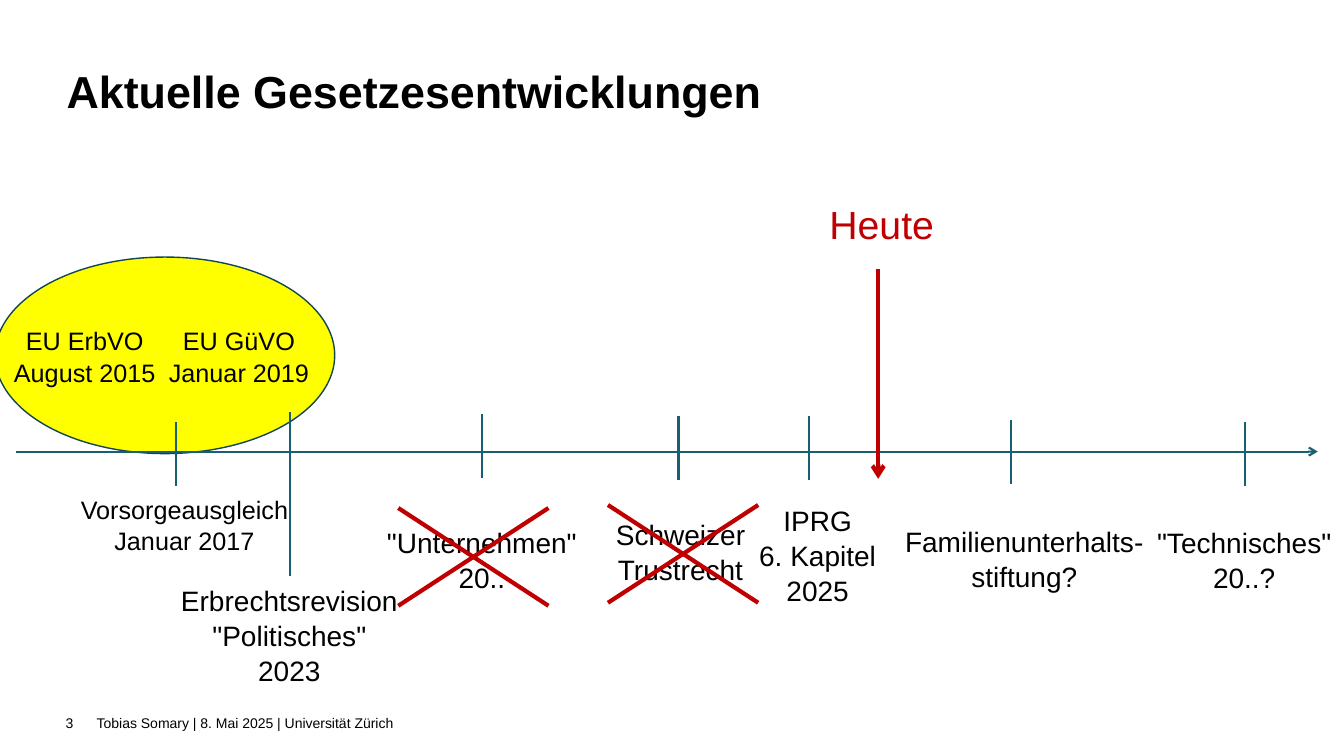
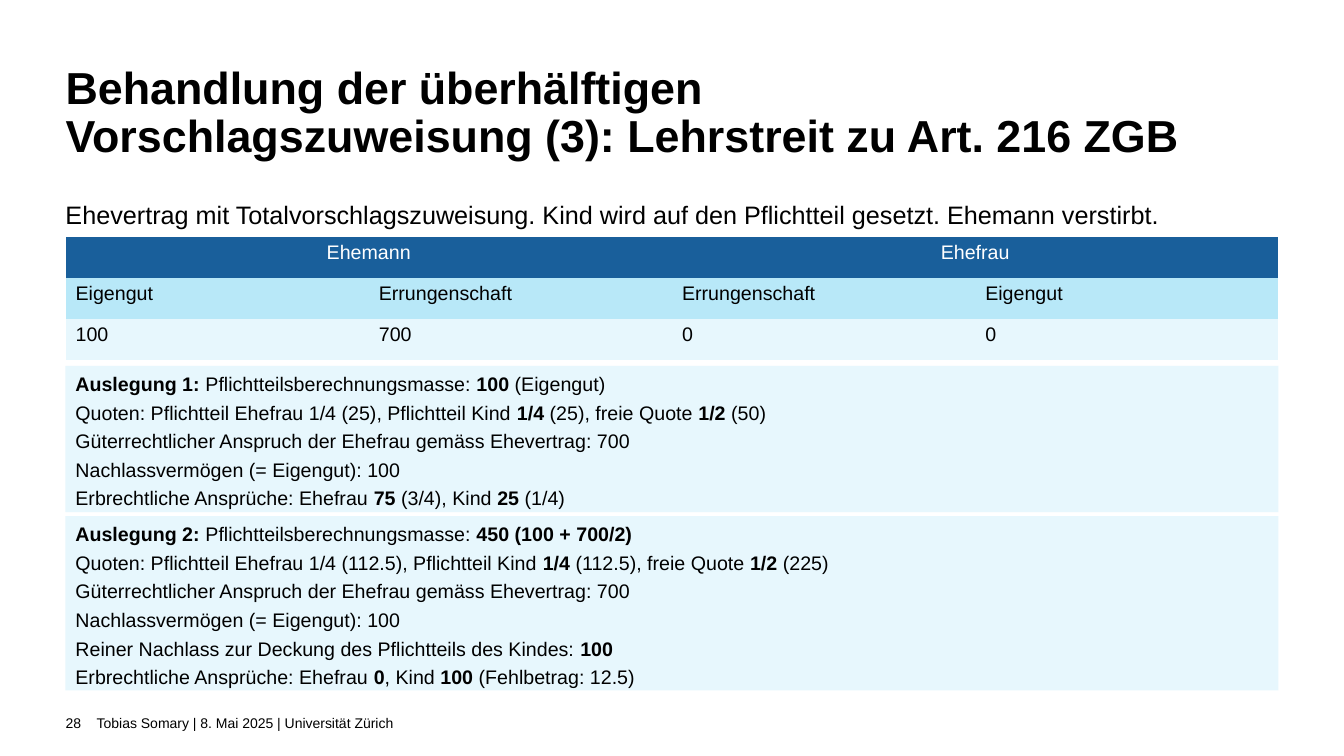
import dataclasses

import pptx
import pptx.dml.color
import pptx.enum.shapes
import pptx.enum.text
import pptx.oxml.ns
import pptx.oxml.xmlchemy
import pptx.util

PX = 9144
SLIDE_SIZE = (1333, 750)
FOOTER = "Tobias Somary | 8. Mai 2025 | Universität Zürich"
PLAIN_TABLE = "{2D5ABB26-0587-4C30-8999-92F81FD0307C}"
LEFT = pptx.enum.text.PP_ALIGN.LEFT
CENTER = pptx.enum.text.PP_ALIGN.CENTER
TOP = pptx.enum.text.MSO_ANCHOR.TOP
MIDDLE = pptx.enum.text.MSO_ANCHOR.MIDDLE


@dataclasses.dataclass(frozen=True)
class Theme:
    """Colours, font, type sizes and spacing shared by the slides."""
    font: str = "Arial"
    ink: str = "000000"
    white: str = "FFFFFF"
    accent: str = "C00000"
    axis: str = "195F73"
    outline: str = "124655"
    highlight: str = "FFFF00"
    header: str = "195F9B"
    subheader: str = "B8E8F8"
    pale: str = "E7F7FD"
    title: int = 32
    today: int = 28
    event: int = 20
    lead: int = 18
    body: int = 14
    footer: int = 10
    leading: float = 1.04
    title_leading: float = 0.9


THEME = Theme()


@dataclasses.dataclass(frozen=True)
class Box:
    """A rectangle in px."""
    left: int
    top: int
    width: int
    height: int

    def inner(self, left, top, width, height):
        """Return a box placed relative to this one."""
        return Box(self.left + left, self.top + top, width, height)

    def emu(self):
        """Return left, top, width and height in EMU."""
        return [px * PX for px in (self.left, self.top, self.width, self.height)]


def rgb(code):
    """Turn a hex code into a colour."""
    return pptx.dml.color.RGBColor.from_string(code)


def write(frame, paragraphs, size, color=THEME.ink, align=LEFT, anchor=TOP,
          inset=(0, 0), leading=THEME.leading, before=0, bold=False):
    """Fill a text frame; ** toggles bold and a newline breaks the line."""
    frame.word_wrap = True
    frame.auto_size = pptx.enum.text.MSO_AUTO_SIZE.NONE
    frame.vertical_anchor = anchor
    frame.margin_left = frame.margin_right = inset[0] * PX
    frame.margin_top = frame.margin_bottom = inset[1] * PX
    for index, content in enumerate(paragraphs):
        paragraph = frame.add_paragraph() if index else frame.paragraphs[0]
        paragraph.alignment = align
        paragraph.line_spacing = leading
        paragraph.space_before = pptx.util.Pt(before if index else 0)
        for part, piece in enumerate(content.split("**")):
            for row, words in enumerate(piece.split("\n")):
                if row:
                    paragraph.add_line_break()
                if words:
                    run = paragraph.add_run()
                    run.text = words
                    run.font.name = THEME.font
                    run.font.size = pptx.util.Pt(size)
                    run.font.bold = bold or part % 2 == 1
                    run.font.color.rgb = rgb(color)


def add_text(slide, box, text, size, **style):
    """Add a one-paragraph text box."""
    write(slide.shapes.add_textbox(*box.emu()).text_frame, [text], size, **style)


def add_filled(slide, box, kind, fill, outline=None):
    """Add a flat preset shape without shadow."""
    shape = slide.shapes.add_shape(kind, *box.emu())
    shape.shadow.inherit = False
    shape.fill.solid()
    shape.fill.fore_color.rgb = rgb(fill)
    if outline:
        shape.line.color.rgb = rgb(outline)
        shape.line.width = pptx.util.Pt(1)
    else:
        shape.line.fill.background()
    return shape


def add_line(slide, box, start, end, color, weight, arrow=False):
    """Draw a straight line between two points of the box."""
    points = [px * PX for x, y in (start, end) for px in (box.left + x, box.top + y)]
    line = slide.shapes.add_connector(
        pptx.enum.shapes.MSO_CONNECTOR.STRAIGHT, *points)
    line.line.color.rgb = rgb(color)
    line.line.width = pptx.util.Pt(weight)
    if arrow:
        tail = pptx.oxml.xmlchemy.OxmlElement("a:tailEnd")
        tail.set("type", "arrow")
        line.line._get_or_add_ln().append(tail)
    line._element.spPr.append(pptx.oxml.xmlchemy.OxmlElement("a:effectLst"))


def add_page(deck, title, title_box, number):
    """Add a slide with its title, page number and footer."""
    slide = deck.slides.add_slide(deck.slide_layouts[5])
    heading = slide.shapes.title
    heading.left, heading.top, heading.width, heading.height = title_box.emu()
    write(heading.text_frame, [title], THEME.title, bold=True,
          leading=THEME.title_leading)
    band = Box(65, 685, 501, 65)
    for left, width, text in ((0, 31, number), (31, 470, FOOTER)):
        add_text(slide, band.inner(left, 0, width, 65), text, THEME.footer,
                 anchor=MIDDLE, leading=1.0)
    return slide


def add_cross(slide, box):
    """Strike out a box with two diagonals."""
    for start, end in ((0, box.height), (box.height, 0)):
        add_line(slide, box, (0, start), (box.width, end), THEME.accent, 3)


def add_eu_rules(slide, box):
    """Draw the ellipse of EU regulations with its two labels."""
    add_filled(slide, box, pptx.enum.shapes.MSO_SHAPE.OVAL,
               THEME.highlight, THEME.outline)
    for left, text in ((13, "EU ErbVO\nAugust 2015"), (166, "EU GüVO\nJanuar 2019")):
        add_text(slide, box.inner(left, 67, 152, 60), text, THEME.lead, align=CENTER)


def add_timeline(slide, box):
    """Draw the axis with its events, the marker for today and the crosses."""
    axis = 258
    add_eu_rules(slide, box.inner(-5, 65, 337, 195))
    add_line(slide, box, (16, axis), (1307, axis), THEME.axis, 1.5, arrow=True)
    events = (
        (175, 229, 63, 183, 299, THEME.lead, "Vorsorgeausgleich\nJanuar 2017"),
        (288, 219, 162, 287, 388, THEME.event,
         "Erbrechtsrevision\n\"Politisches\"\n2023"),
        (478, 221, 63, 478, 330, THEME.event, "\"Unternehmen\"\n20.."),
        (673, 223, 63, 675, 322, THEME.event, "Schweizer\nTrustrecht"),
        (802, 223, 63, 811, 308, THEME.event, "IPRG\n6. Kapitel\n2025"),
        (1003, 227, 63, 1016, 329, THEME.event, "Familienunterhalts-\nstiftung?"),
        (1235, 229, 63, 1234, 330, THEME.event, "\"Technisches\"\n20..?"),
    )
    for tick, top, length, center, label_top, size, text in events:
        add_line(slide, box, (tick, top), (tick, top + length), THEME.axis, 1.5)
        half = min(125, box.width - center)
        label = box.inner(center - half, label_top, 2 * half, 100)
        add_text(slide, label, text, size, align=CENTER)
    add_text(slide, box.inner(806, 7, 137, 47), "Heute", THEME.today,
             color=THEME.accent, align=CENTER)
    add_line(slide, box, (871, 77), (871, 285), THEME.accent, 3, arrow=True)
    for left, top in ((395, 314), (603, 311)):
        add_cross(slide, box.inner(left, top, 149, 97))


def add_estate_table(slide, box):
    """Add the table of the spouses' property."""
    rows = (
        (THEME.header, THEME.white, CENTER, ("Ehemann", "", "Ehefrau", "")),
        (THEME.subheader, THEME.ink, LEFT,
         ("Eigengut", "Errungenschaft", "Errungenschaft", "Eigengut")),
        (THEME.pale, THEME.ink, LEFT, ("100", "700", "0", "0")),
    )
    table = slide.shapes.add_table(len(rows), 4, *box.emu()).table
    style = table._tbl.tblPr.find(pptx.oxml.ns.qn("a:tableStyleId"))
    style.text = PLAIN_TABLE
    for left in (0, 2):
        table.cell(0, left).merge(table.cell(0, left + 1))
    for row, (fill, color, align, texts) in enumerate(rows):
        for column, text in enumerate(texts):
            cell = table.cell(row, column)
            cell.fill.solid()
            cell.fill.fore_color.rgb = rgb(fill)
            if text:
                write_cell(cell, text, color, align)


def write_cell(cell, text, color, align):
    """Write one table cell."""
    paragraph = cell.text_frame.paragraphs[0]
    paragraph.alignment = align
    run = paragraph.add_run()
    run.text = text
    run.font.name = THEME.font
    run.font.size = pptx.util.Pt(THEME.body)
    run.font.bold = False
    run.font.color.rgb = rgb(color)


def add_reading(slide, box, lines):
    """Add a pale panel with one reading of the law."""
    panel = add_filled(slide, box, pptx.enum.shapes.MSO_SHAPE.RECTANGLE, THEME.pale)
    write(panel.text_frame, lines, THEME.body, inset=(10, 5), before=3)


def add_dispute(slide, box):
    """Place the case, the table and both readings below each other."""
    add_text(slide, box.inner(0, 0, box.width, 34),
             "Ehevertrag mit Totalvorschlagszuweisung. Kind wird auf den "
             "Pflichtteil gesetzt. Ehemann verstirbt.",
             THEME.lead, leading=pptx.util.Pt(24))
    add_estate_table(slide, box.inner(0, 41, box.width, 122))
    shared = ["Güterrechtlicher Anspruch der Ehefrau gemäss Ehevertrag: 700",
              "Nachlassvermögen (= Eigengut): 100"]
    add_reading(slide, box.inner(0, 169, box.width, 145), [
        "**Auslegung 1: **Pflichtteilsberechnungsmasse: **100 **(Eigengut)",
        "Quoten: Pflichtteil Ehefrau 1/4 (25), Pflichtteil Kind **1/4** (25), "
        "freie Quote **1/2 **(50)",
        *shared,
        "Erbrechtliche Ansprüche: Ehefrau **75** (3/4), Kind **25 **(1/4)"])
    add_reading(slide, box.inner(0, 318, box.width, 173), [
        "**Auslegung 2: **Pflichtteilsberechnungsmasse: **450 (100 + 700/2)**",
        "Quoten: Pflichtteil Ehefrau 1/4 (112.5), Pflichtteil Kind **1/4** (112.5), "
        "freie Quote **1/2 **(225)",
        *shared,
        "Reiner Nachlass zur Deckung des Pflichtteils des Kindes: **100**",
        "Erbrechtliche Ansprüche: Ehefrau **0**, Kind **100 **(Fehlbetrag: 12.5)"])


def main():
    """Build and save the presentation."""
    deck = pptx.Presentation()
    deck.slide_width, deck.slide_height = (px * PX for px in SLIDE_SIZE)
    developments = add_page(deck, "Aktuelle Gesetzesentwicklungen",
                            Box(66, 69, 1203, 54), "3")
    add_timeline(developments, Box(0, 190, 1333, 495))
    dispute = add_page(
        deck,
        "Behandlung der überhälftigen\n"
        "Vorschlagszuweisung (3): Lehrstreit zu Art. 216 ZGB",
        Box(65, 65, 1203, 98), "28")
    add_dispute(dispute, Box(65, 194, 1203, 491))
    deck.save("out.pptx")


if __name__ == "__main__":
    main()
